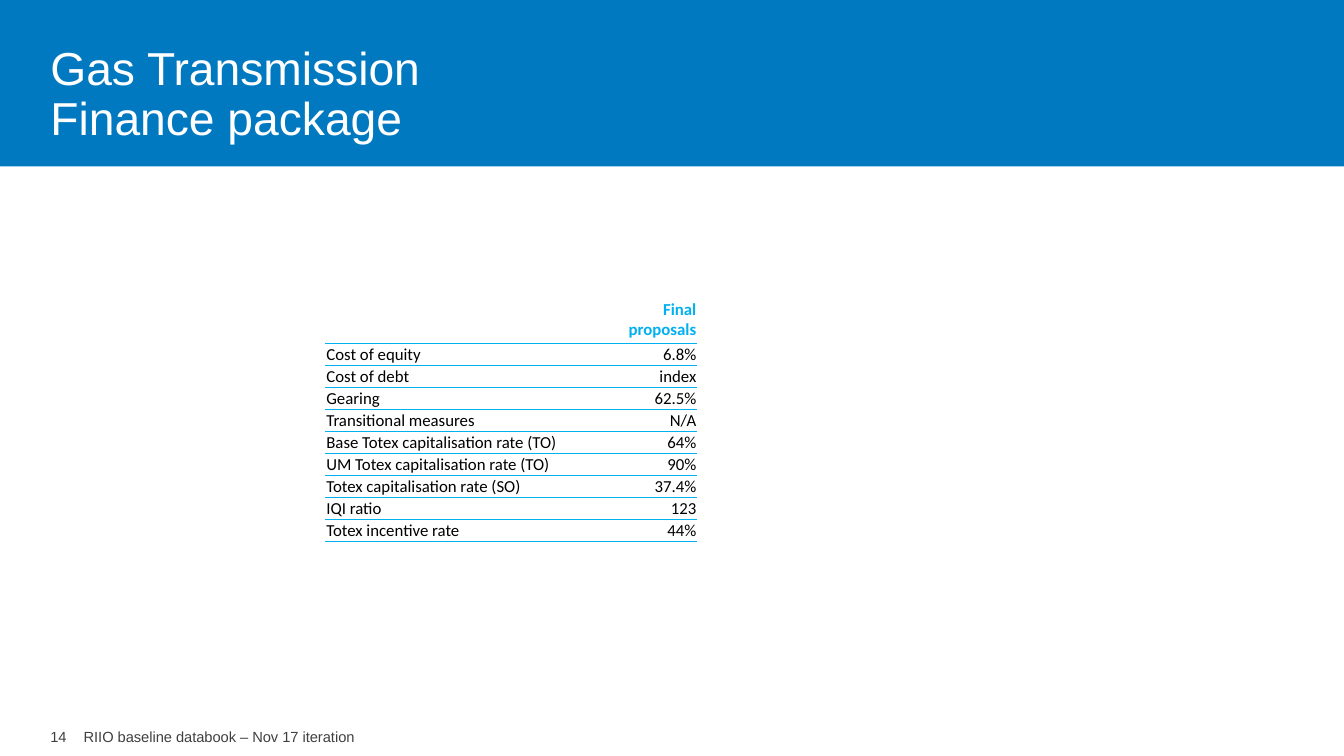
from copy import deepcopy
from typing import NamedTuple

from lxml.etree import SubElement
from pptx import Presentation
from pptx.dml.color import RGBColor
from pptx.enum.shapes import MSO_SHAPE
from pptx.enum.text import MSO_ANCHOR, MSO_AUTO_SIZE, PP_ALIGN
from pptx.oxml.ns import qn
from pptx.slide import Slide
from pptx.table import _Cell
from pptx.text.text import TextFrame
from pptx.util import Pt

BANNER_BLUE = RGBColor(0x00, 0x79, 0xC1)
ACCENT_BLUE = RGBColor(0x00, 0xB0, 0xF0)
WHITE = RGBColor(0xFF, 0xFF, 0xFF)
BLACK = RGBColor(0x00, 0x00, 0x00)
FOOTER_GREY = RGBColor(0x40, 0x40, 0x40)

SLIDE_WIDTH, SLIDE_HEIGHT = 960, 540
HEADER_HEIGHT, ROW_HEIGHT = 32.4, 15.75
LABEL_WIDTH, VALUE_WIDTH = 203.9, 61.8


class FinanceTerm(NamedTuple):
    label: str
    value: str


class FooterItem(NamedTuple):
    text: str
    left: float
    width: float


TERMS = [
    FinanceTerm("Cost of equity", "6.8%"),
    FinanceTerm("Cost of debt", "index"),
    FinanceTerm("Gearing", "62.5%"),
    FinanceTerm("Transitional measures", "N/A"),
    FinanceTerm("Base Totex capitalisation rate (TO)", "64%"),
    FinanceTerm("UM Totex capitalisation rate (TO)", "90%"),
    FinanceTerm("Totex capitalisation rate (SO)", "37.4%"),
    FinanceTerm("IQI ratio", "123"),
    FinanceTerm("Totex incentive rate", "44%"),
]

FOOTER = [
    FooterItem("14", 36, 12),
    FooterItem("RIIO baseline databook – Nov 17 iteration", 59.75, 220),
]


def write_text(frame: TextFrame, text: str, *, font: str = "Arial", size: float = 12,
               color: RGBColor = BLACK, bold: bool = False,
               align: PP_ALIGN = PP_ALIGN.LEFT, spacing: float = 1.0) -> None:
    paragraph = frame.paragraphs[0]
    paragraph.text = text.replace("\n", "\v")
    paragraph.alignment = align
    paragraph.line_spacing = spacing
    for run in paragraph.runs:
        run.font.name = font
        run.font.size = Pt(size)
        run.font.bold = bold
        run.font.color.rgb = color
        run_format = run.font._element
    for line_break in paragraph._p.findall(qn("a:br")):
        line_break.append(deepcopy(run_format))


def fit_frame(frame: TextFrame) -> None:
    frame.margin_left = frame.margin_right = frame.margin_top = frame.margin_bottom = 0
    frame.word_wrap = False
    frame.auto_size = MSO_AUTO_SIZE.SHAPE_TO_FIT_TEXT
    frame.vertical_anchor = MSO_ANCHOR.TOP


def format_cell(cell: _Cell, top: float, bottom: float) -> None:
    cell.margin_left = cell.margin_right = cell.margin_top = Pt(0.72)
    cell.margin_bottom = 0
    cell.vertical_anchor = MSO_ANCHOR.TOP
    properties = cell._tc.get_or_add_tcPr()
    for side, width in (("L", 0), ("R", 0), ("T", top), ("B", bottom)):
        border = SubElement(properties, qn(f"a:ln{side}"), w=str(Pt(width)))
        if width:
            fill = SubElement(border, qn("a:solidFill"))
            SubElement(fill, qn("a:srgbClr"), val=str(ACCENT_BLUE))
        else:
            SubElement(border, qn("a:noFill"))
    cell.fill.solid()
    cell.fill.fore_color.rgb = WHITE


def add_banner(slide: Slide) -> None:
    banner = slide.shapes.add_shape(MSO_SHAPE.RECTANGLE, 0, 0, Pt(SLIDE_WIDTH), Pt(118.8))
    banner.shadow.inherit = False
    banner.fill.solid()
    banner.fill.fore_color.rgb = BANNER_BLUE
    banner.line.fill.background()
    slide.shapes._spTree.insert(2, banner._element)


def add_title(slide: Slide) -> None:
    title = slide.shapes.title
    title.left, title.top, title.width, title.height = Pt(36), Pt(32.4), Pt(296), Pt(72)
    fit_frame(title.text_frame)
    write_text(title.text_frame, "Gas Transmission\nFinance package",
               size=33, color=WHITE, spacing=0.9)


def add_footer(slide: Slide, item: FooterItem) -> None:
    footer = slide.shapes.add_textbox(Pt(item.left), Pt(520), Pt(item.width), Pt(13))
    fit_frame(footer.text_frame)
    write_text(footer.text_frame, item.text, size=10.5, color=FOOTER_GREY)


def add_finance_table(slide: Slide) -> None:
    row_count = len(TERMS) + 1
    finance = slide.shapes.add_table(
        row_count, 2, Pt(232.4), Pt(213), Pt(LABEL_WIDTH + VALUE_WIDTH),
        Pt(HEADER_HEIGHT + ROW_HEIGHT * len(TERMS))).table
    finance.first_row = finance.horz_banding = False
    finance.columns[0].width, finance.columns[1].width = Pt(LABEL_WIDTH), Pt(VALUE_WIDTH)
    for index in range(row_count):
        finance.rows[index].height = Pt(ROW_HEIGHT if index else HEADER_HEIGHT)
        top = (0.5, 1)[index == 1] if index else 0
        for cell in finance.rows[index].cells:
            format_cell(cell, top, 0.5 if index else 1)
    write_text(finance.cell(0, 1).text_frame, "Final proposals", font="Calibri",
               color=ACCENT_BLUE, bold=True, align=PP_ALIGN.RIGHT)
    for index, term in enumerate(TERMS, start=1):
        write_text(finance.cell(index, 0).text_frame, term.label, font="Calibri")
        write_text(finance.cell(index, 1).text_frame, term.value, font="Calibri",
                   align=PP_ALIGN.RIGHT)


def main() -> None:
    deck = Presentation()
    deck.slide_width, deck.slide_height = Pt(SLIDE_WIDTH), Pt(SLIDE_HEIGHT)
    slide = deck.slides.add_slide(deck.slide_layouts[5])
    add_banner(slide)
    add_title(slide)
    for item in FOOTER:
        add_footer(slide, item)
    add_finance_table(slide)
    deck.save("out.pptx")


if __name__ == "__main__":
    main()
